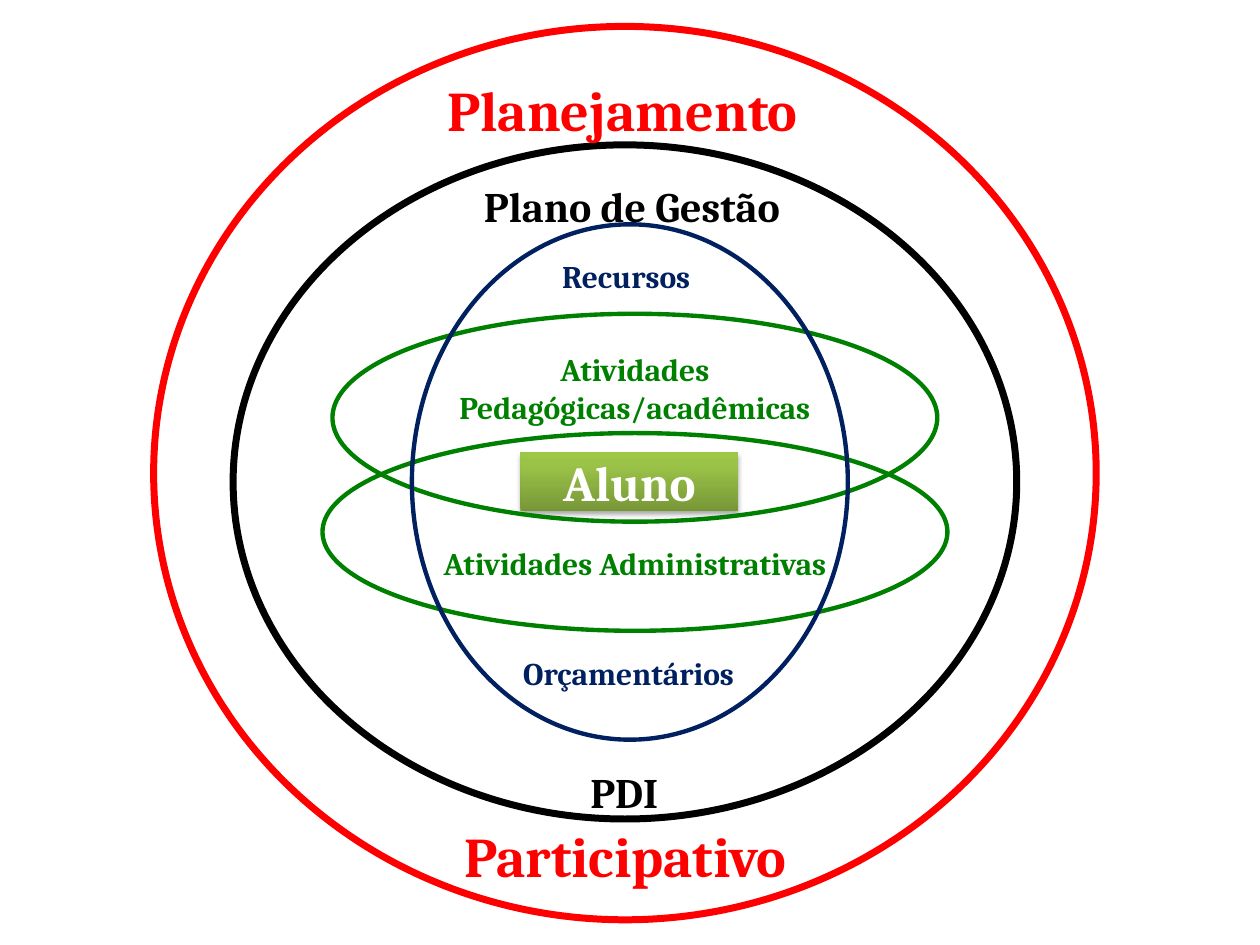
from copy import deepcopy
from dataclasses import dataclass

from lxml.etree import SubElement
from pptx import Presentation
from pptx.dml.color import RGBColor
from pptx.enum.shapes import MSO_SHAPE as Shape
from pptx.enum.text import MSO_ANCHOR as Anchor
from pptx.enum.text import MSO_AUTO_SIZE as AutoSize
from pptx.enum.text import PP_ALIGN as Align
from pptx.oxml.ns import qn
from pptx.util import Pt

FONT = "Cambria"
RED, BLACK, NAVY, GREEN, WHITE = "FF0000", "000000", "002060", "008000", "FFFFFF"


@dataclass
class Box:
    left: float
    top: float
    width: float
    height: float

    def lengths(self) -> list:
        return [Pt(value) for value in (self.left, self.top, self.width, self.height)]


@dataclass
class Ring:
    box: Box
    color: str
    weight: float
    text: str = ""
    top_inset: float = 3.6


@dataclass
class Label:
    box: Box
    text: str
    size: float
    color: str
    padded: bool = True


RINGS = [
    Ring(Box(190, 179.3, 345.6, 118.8), GREEN, 2.5, "Atividades Pedagógicas/acadêmicas"),
    Ring(Box(184.3, 247.5, 357.1, 113), GREEN, 2.5, "Atividades Administrativas", 46.8),
    Ring(Box(235.4, 128.2, 249.1, 294.5), NAVY, 2.5),
    Ring(Box(133.2, 82.8, 447.8, 385.2), BLACK, 4),
    Ring(Box(87.8, 15.1, 538.6, 510.5), RED, 4),
]
LABELS = [
    Label(Box(239.8, 43.2, 231.8, 38.9), "Planejamento", 32, RED, False),
    Label(Box(249.8, 469.4, 215.3, 38.9), "Participativo", 32, RED, False),
    Label(Box(254.2, 99.4, 213.8, 36), "Plano de Gestão", 24, BLACK),
    Label(Box(325.4, 434.2, 62.6, 36), "PDI", 24, BLACK),
    Label(Box(305, 143.3, 105.8, 28.8), "Recursos", 18, NAVY),
    Label(Box(281.5, 370.1, 155.5, 28.8), "Orçamentários", 18, NAVY),
]
STUDENT = Label(Box(297.4, 258.5, 124.6, 33.8), "Aluno", 28, WHITE, False)
STUDENT_GRADIENT = [(0, "779737"), (0.8, "9BC348"), (1, "9DC746")]


def rgb(color: str) -> RGBColor:
    return RGBColor.from_string(color)


def write(shape, text: str, size: float, color: str) -> None:
    paragraph = shape.text_frame.paragraphs[0]
    paragraph.text = text
    paragraph.alignment = Align.CENTER
    paragraph.font.name = FONT
    paragraph.font.size = Pt(size)
    paragraph.font.bold = True
    paragraph.font.color.rgb = rgb(color)


def remove_padding(frame) -> None:
    frame.margin_left = frame.margin_right = 0
    frame.margin_top = frame.margin_bottom = 0


def draw_ring(slide, ring: Ring) -> None:
    shape = slide.shapes.add_shape(Shape.OVAL, *ring.box.lengths())
    shape.shadow.inherit = False
    shape.fill.background()
    shape.line.color.rgb = rgb(ring.color)
    shape.line.width = Pt(ring.weight)
    if ring.text:
        frame = shape.text_frame
        frame.word_wrap = True
        frame.vertical_anchor = Anchor.TOP
        frame.margin_top = Pt(ring.top_inset)
        write(shape, ring.text, 18, ring.color)


def draw_label(slide, label: Label) -> None:
    shape = slide.shapes.add_textbox(*label.box.lengths())
    frame = shape.text_frame
    frame.word_wrap = False
    frame.auto_size = AutoSize.SHAPE_TO_FIT_TEXT
    if not label.padded:
        remove_padding(frame)
    write(shape, label.text, label.size, label.color)


def fill_gradient(shape, stops: list[tuple[float, str]]) -> None:
    shape.fill.gradient()
    shape.fill.gradient_angle = 90
    stop_list = shape._element.spPr.find(qn("a:gradFill")).find(qn("a:gsLst"))
    stop_list.append(deepcopy(stop_list[-1]))
    for stop, (position, color) in zip(shape.fill.gradient_stops, stops):
        stop.position = position
        stop.color.rgb = rgb(color)


def add_shadow(shape) -> None:
    shape.shadow.inherit = False
    effects = shape._element.spPr.find(qn("a:effectLst"))
    shadow = SubElement(effects, qn("a:outerShdw"), blurRad=str(Pt(3.1)),
                        dist=str(Pt(1.8)), dir="5400000", rotWithShape="0")
    color = SubElement(shadow, qn("a:srgbClr"), val=BLACK)
    SubElement(color, qn("a:alpha"), val="35000")


def draw_student(slide) -> None:
    shape = slide.shapes.add_shape(Shape.RECTANGLE, *STUDENT.box.lengths())
    fill_gradient(shape, STUDENT_GRADIENT)
    shape.line.fill.background()
    add_shadow(shape)
    frame = shape.text_frame
    frame.word_wrap = True
    frame.auto_size = AutoSize.SHAPE_TO_FIT_TEXT
    frame.vertical_anchor = Anchor.TOP
    remove_padding(frame)
    write(shape, STUDENT.text, STUDENT.size, STUDENT.color)


def main() -> None:
    presentation = Presentation()
    presentation.slide_width = Pt(720)
    presentation.slide_height = Pt(540)
    slide = presentation.slides.add_slide(presentation.slide_layouts[6])
    draw_student(slide)
    for ring in RINGS:
        draw_ring(slide, ring)
    for label in LABELS:
        draw_label(slide, label)
    presentation.save("out.pptx")


if __name__ == "__main__":
    main()
